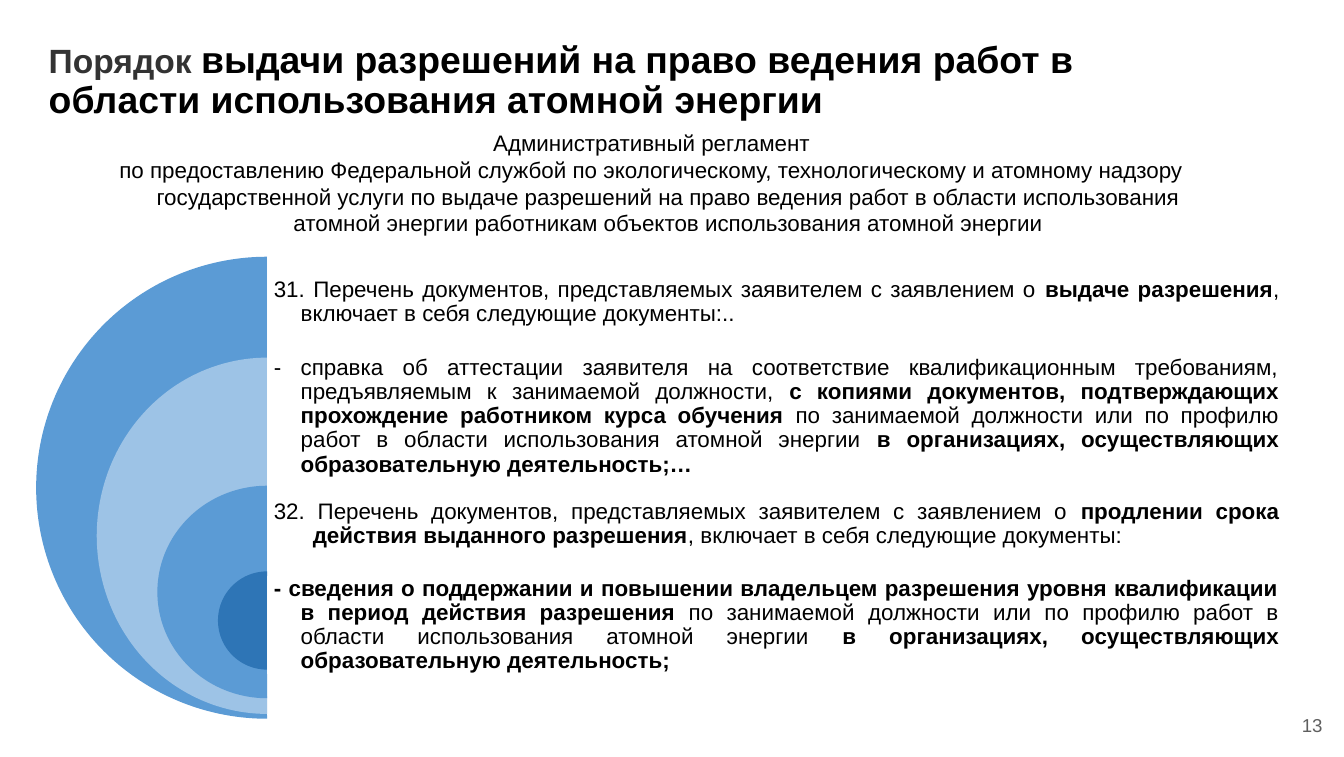
from lxml import etree
from pptx import Presentation
from pptx import util as u
from pptx.dml.color import RGBColor
from pptx.enum import shapes, text
from pptx.oxml.ns import qn

FONT = "Arial"
CENTER_X = 143.1
PANEL_WIDTH = 545.8

SECTIONS = [
    {
        "pie": (137.5, 247.4, 247.4, "5B9BD5"),
        "panel": (135.5, 247.7),
        "text_height": 52.6,
        "indent": 14.4,
        "runs": [
            ("31. Перечень документов, представляемых заявителем с заявлением о ", False),
            ("выдаче разрешения", True),
            (", включает в себя следующие документы:..", False),
        ],
    },
    {
        "pie": (191.5, 182.5, 190.8, "9DC3E6"),
        "panel": (187.2, 185.8),
        "text_height": 71.6,
        "indent": 14.4,
        "runs": [
            ("- справка об аттестации заявителя на соответствие квалификационным "
             "требованиям, предъявляемым к занимаемой должности, ", False),
            ("с копиями документов, подтверждающих прохождение работником курса обучения ", True),
            ("по занимаемой должности или по профилю работ в области использования "
             "атомной энергии ", False),
            ("в организациях, осуществляющих образовательную деятельность;…", True),
        ],
    },
    {
        "pie": (260.1, 117.6, 113.8, "5B9BD5"),
        "panel": (259.2, 97.2),
        "text_height": 43.2,
        "indent": 20.9,
        "runs": [
            ("32. Перечень документов, представляемых заявителем с заявлением о ", False),
            ("продлении срока действия выданного разрешения", True),
            (", включает в себя следующие документы:", False),
        ],
    },
    {
        "pie": (306, 52.6, 52.6, "2E75B6"),
        "panel": (308.5, 52.6),
        "text_height": 52.6,
        "indent": 14.4,
        "runs": [
            ("- сведения о поддержании и повышении владельцем разрешения уровня "
             "квалификации в период действия разрешения ", True),
            ("по занимаемой должности или по профилю работ в области использования "
             "атомной энергии ", False),
            ("в организациях, осуществляющих образовательную деятельность;", True),
        ],
    },
]


def color(value):
    return RGBColor.from_string(value)


def set_frame(frame, horizontal, vertical, anchor=text.MSO_ANCHOR.TOP):
    frame.word_wrap = True
    frame.auto_size = text.MSO_AUTO_SIZE.NONE
    frame.vertical_anchor = anchor
    frame.margin_left = frame.margin_right = u.Pt(horizontal)
    frame.margin_top = frame.margin_bottom = u.Pt(vertical)
    return frame


def format_paragraph(paragraph, alignment, line_spacing=1.0, indent=0):
    paragraph.alignment = alignment
    paragraph.line_spacing = line_spacing
    paragraph.space_before = paragraph.space_after = u.Pt(0)
    if indent:
        properties = paragraph._p.get_or_add_pPr()
        properties.set("marL", str(u.Pt(indent)))
        properties.set("indent", str(-u.Pt(indent)))


def add_run(paragraph, content, size=12, bold=False, fill="000000"):
    run = paragraph.add_run()
    run.text = content
    run.font.name = FONT
    run.font.size = u.Pt(size)
    run.font.bold = bold
    run.font.color.rgb = color(fill)


def add_text_box(parent, box, horizontal, vertical, anchor=text.MSO_ANCHOR.TOP):
    shape = parent.add_textbox(*map(u.Pt, box))
    return set_frame(shape.text_frame, horizontal, vertical, anchor)


def add_plain_shape(parent, kind, box, fill):
    shape = parent.add_shape(kind, *map(u.Pt, box))
    shape.shadow.inherit = False
    shape.fill.solid()
    shape.fill.fore_color.rgb = color(fill)
    shape.line.fill.background()
    return shape


def add_half_disc(parent, top, width, height, fill):
    box = (CENTER_X - width / 2, top, width, height)
    shape = add_plain_shape(parent, shapes.MSO_SHAPE.PIE, box, fill)
    shape.adjustments[0] = 54
    shape.adjustments[1] = 162


def add_panel(parent, top, height):
    box = (CENTER_X, top, PANEL_WIDTH, height)
    shape = add_plain_shape(parent, shapes.MSO_SHAPE.RECTANGLE, box, "FFFFFF")
    fill = shape._element.spPr.find(qn("a:solidFill"))
    etree.SubElement(fill[0], qn("a:alpha")).set("val", "90000")


def add_section(parent, section):
    add_half_disc(parent, *section["pie"])
    add_panel(parent, *section["panel"])
    box = (CENTER_X, section["panel"][0], PANEL_WIDTH, section["text_height"])
    frame = add_text_box(parent, box, 3.6, 3.6, text.MSO_ANCHOR.MIDDLE)
    paragraph = frame.paragraphs[0]
    format_paragraph(paragraph, text.PP_ALIGN.JUSTIFY, 0.9, section["indent"])
    for content, bold in section["runs"]:
        add_run(paragraph, content, bold=bold)


def add_title(slide):
    title = slide.shapes.title
    title.left, title.top, title.width, title.height = map(u.Pt, (26.1, 22, 582.5, 43.2))
    paragraph = set_frame(title.text_frame, 0, 0).paragraphs[0]
    format_paragraph(paragraph, text.PP_ALIGN.LEFT, 0.9)
    add_run(paragraph, "Порядок ", 18, True, "333333")
    add_run(paragraph, "выдачи разрешений на право ведения работ в области "
            "использования атомной энергии", 20, True)


def add_regulation(slide):
    frame = add_text_box(slide.shapes, (41, 65.5, 616.3, 50.4), 7.2, 3.6)
    lines = [
        "Административный регламент",
        "по предоставлению Федеральной службой по экологическому, технологическому "
        "и атомному надзору государственной услуги по выдаче разрешений на право "
        "ведения работ в области использования атомной энергии работникам объектов "
        "использования атомной энергии",
    ]
    for index, line in enumerate(lines):
        paragraph = frame.add_paragraph() if index else frame.paragraphs[0]
        format_paragraph(paragraph, text.PP_ALIGN.CENTER, 1.0, 18)
        add_run(paragraph, line)


def add_page_number(slide):
    frame = add_text_box(slide.shapes, (674.6, 378.7, 45.4, 26.6), 11.5, 3.6)
    paragraph = frame.paragraphs[0]
    format_paragraph(paragraph, text.PP_ALIGN.RIGHT)
    add_run(paragraph, "13", 10, fill="5F5F5F")


def main():
    presentation = Presentation()
    presentation.slide_width, presentation.slide_height = u.Pt(720), u.Pt(405.38)
    slide = presentation.slides.add_slide(presentation.slide_layouts[5])
    add_title(slide)
    add_page_number(slide)
    add_regulation(slide)
    diagram = slide.shapes.add_group_shape()
    for section in SECTIONS:
        add_section(diagram.shapes, section)
    presentation.save("out.pptx")


if __name__ == "__main__":
    main()
